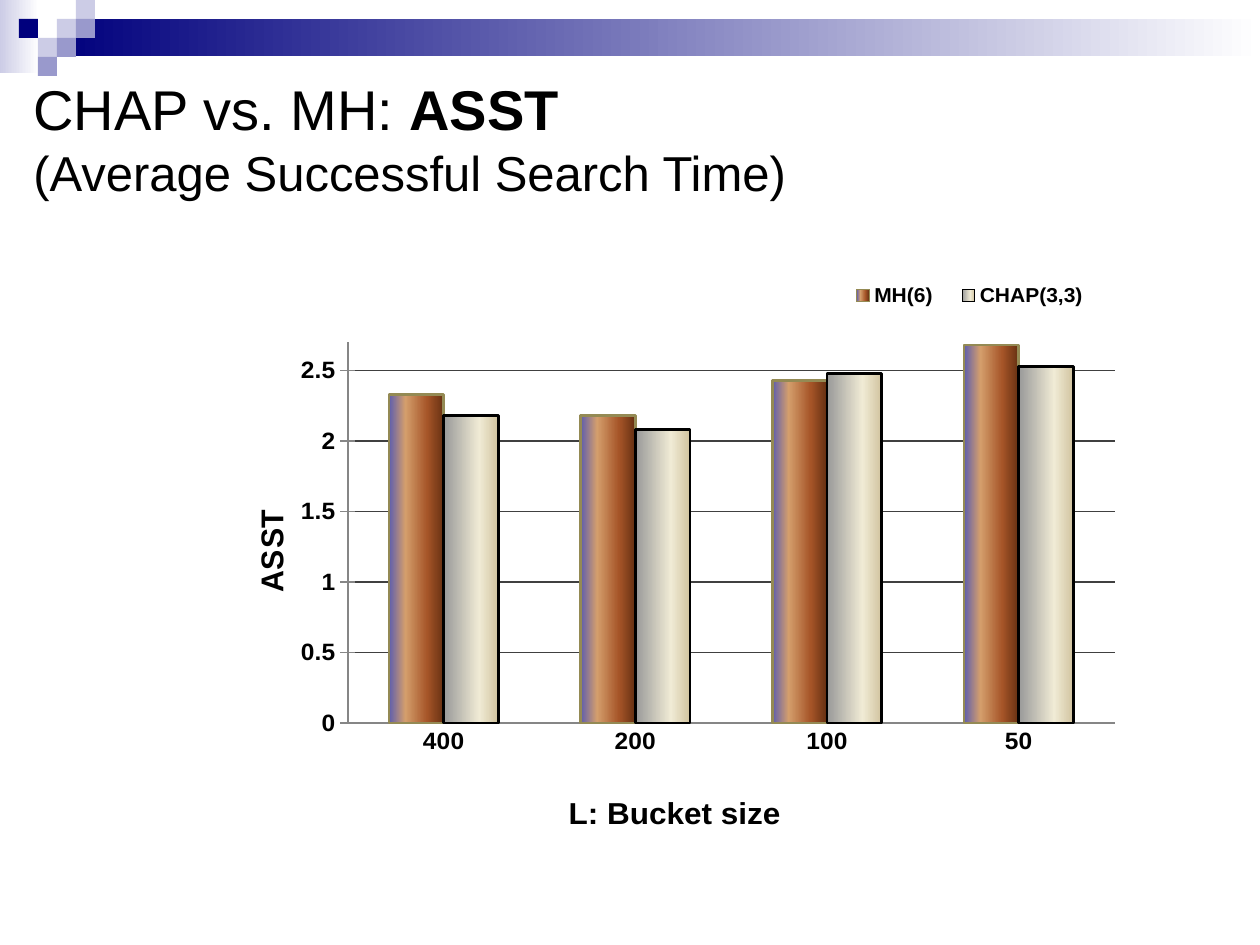
from pptx import Presentation, util as u, oxml
from pptx.chart.data import CategoryChartData
from pptx.dml.color import RGBColor
from pptx.enum import chart as ch, shapes, text
from pptx.oxml.ns import nsdecls, qn

BLACK = RGBColor(0x00, 0x00, 0x00)
WHITE = RGBColor(0xFF, 0xFF, 0xFF)
NAVY = RGBColor(0x00, 0x00, 0x7D)
PALE = RGBColor(0xCC, 0xCC, 0xE6)
LILAC = RGBColor(0x99, 0x99, 0xCC)
DARK = RGBColor(0x40, 0x40, 0x40)
GREY = RGBColor(0x86, 0x86, 0x86)
OLIVE = RGBColor(0x94, 0x8A, 0x54)
COPPER = [(0, RGBColor(0x5D, 0x5D, 0xAE)), (30, RGBColor(0xD4, 0x9E, 0x6C)),
          (70, RGBColor(0xA6, 0x55, 0x28)), (100, RGBColor(0x66, 0x30, 0x12))]
CREAM = [(0, RGBColor(0x99, 0x99, 0x99)), (65, RGBColor(0xF0, 0xEB, 0xD5)),
         (100, RGBColor(0xD1, 0xC3, 0x9F))]
SCALE = u.Inches(1) / 126


def px(*vals):
    return [round(v * SCALE) for v in vals]


class Deck:
    """Holds the style and the current slide."""

    def __init__(self, font):
        self.font = font
        self.prs = Presentation()
        self.prs.slide_width, self.prs.slide_height = px(1260, 945)
        self.slide = self.prs.slides.add_slide(self.prs.slide_layouts[6])

    def style(self, font, size, bold=False):
        font.name, font.size, font.bold = self.font, u.Pt(size), bold
        font.color.rgb = BLACK

    def line(self, line, color, width):
        line.color.rgb, line.width = color, u.Pt(width)

    def fade(self, fill, node, stops):
        fill.gradient()
        fill.gradient_angle = 0
        items = node.find(".//" + qn("a:gsLst"))
        for old in list(items):
            items.remove(old)
        for pos, color in stops:
            items.append(oxml.parse_xml(
                f'<a:gs {nsdecls("a")} pos="{pos * 1000}">'
                f'<a:srgbClr val="{color}"/></a:gs>'))

    def rect(self, x, y, w, h, color, end=None):
        box = self.slide.shapes.add_shape(
            shapes.MSO_SHAPE.RECTANGLE, *px(x, y, w, h))
        box.shadow.inherit = False
        box.line.fill.background()
        if end is None:
            box.fill.solid()
            box.fill.fore_color.rgb = color
        else:
            self.fade(box.fill, box._element, [(0, color), (100, end)])

    def title(self, x, y, w, h, rows):
        frame = self.slide.shapes.add_textbox(*px(x, y, w, h)).text_frame
        frame.word_wrap = True
        frame.vertical_anchor = text.MSO_ANCHOR.TOP
        frame.margin_top = px(12)[0]
        frame.text = "\n".join("".join(t for t, _ in runs) for _, runs in rows)
        for para, (size, runs) in zip(frame.paragraphs, rows):
            para.text = ""
            for words, bold in runs:
                run = para.add_run()
                run.text = words
                self.style(run.font, size, bold)

    def place(self, node, x, y, w=None, h=None, inner=False):
        for old in node.findall(qn("c:layout")):
            node.remove(old)
        parts = [("layoutTarget", "inner")] if inner else []
        parts += [("xMode", "edge"), ("yMode", "edge"), ("x", x), ("y", y)]
        if w:
            parts += [("w", w), ("h", h)]
        body = "".join(f'<c:{k} val="{v}"/>' for k, v in parts)
        item = oxml.parse_xml(f'<c:layout {nsdecls("c")}><c:manualLayout>'
                              f'{body}</c:manualLayout></c:layout>')
        after = node.find(qn("c:overlay"))
        if after is None:
            node.insert(0, item)
        else:
            after.addprevious(item)

    def border(self, chart, color, width):
        chart.font._element.addprevious(oxml.parse_xml(
            f'<c:spPr {nsdecls("c", "a")}><a:noFill/>'
            f'<a:ln w="{u.Pt(width)}"><a:solidFill><a:srgbClr val="{color}"/>'
            '</a:solidFill></a:ln></c:spPr>'))

    def axis(self, axis, name, spot, tick):
        axis.has_title = True
        frame = axis.axis_title.text_frame
        frame.text = name
        self.style(frame.paragraphs[0].runs[0].font, 18, True)
        self.place(axis.axis_title._element, *spot)
        self.style(axis.tick_labels.font, 14, True)
        axis.major_tick_mark = tick
        axis.minor_tick_mark = ch.XL_TICK_MARK.NONE
        self.line(axis.format.line, GREY, 0.75)

    def chart(self, x, y, w, h, cats, rows):
        data = CategoryChartData()
        data.categories = cats
        for name, vals, *_ in rows:
            data.add_series(name, vals)
        chart = self.slide.shapes.add_chart(
            ch.XL_CHART_TYPE.COLUMN_CLUSTERED, *px(x, y, w, h), data).chart
        chart.has_title = False
        self.style(chart.font, 12)
        self.border(chart, DARK, 2.25)
        plot = chart.plots[0]
        plot.gap_width, plot.overlap, plot.vary_by_categories = 150, 0, False
        for ser, (_, _, stops, edge) in zip(plot.series, rows):
            self.fade(ser.format.fill, ser._element, stops)
            self.line(ser.format.line, edge, 1.5)
        self.axis(chart.category_axis, "L: Bucket size", (0.4, 0.95),
                  ch.XL_TICK_MARK.NONE)
        val = chart.value_axis
        self.axis(val, "ASST", (0.06, 0.47), ch.XL_TICK_MARK.CROSS)
        val.minimum_scale, val.maximum_scale, val.major_unit = 0, 2.7, 0.5
        val.tick_labels.number_format = "General"
        val.tick_labels.number_format_is_linked = False
        self.line(val.major_gridlines.format.line, DARK, 0.75)
        chart.has_legend = True
        chart.legend.position = ch.XL_LEGEND_POSITION.RIGHT
        chart.legend.include_in_layout = False
        self.style(chart.legend.font, 12, True)
        self.place(chart.legend._element, 0.69, 0.08, 0.29, 0.06)
        area = chart._chartSpace.find(".//" + qn("c:plotArea"))
        self.place(area, 0.17, 0.19, 0.82, 0.65, inner=True)


def main():
    deck = Deck("Arial")
    deck.rect(0, 0, 39, 73, PALE, WHITE)
    deck.rect(57, 19, 1203, 37, NAVY, WHITE)
    side = 19
    tiles = [(3, 1, PALE), (4, 0, PALE), (4, 1, LILAC), (2, 2, PALE),
             (1, 1, NAVY), (3, 2, LILAC), (2, 3, LILAC)]
    for col, row, color in tiles:
        deck.rect(col * side, row * side, side, side, color)
    deck.chart(189, 231, 935, 609, ["400", "200", "100", "50"], [
        ("MH(6)", (2.33, 2.18, 2.43, 2.68), COPPER, OLIVE),
        ("CHAP(3,3)", (2.18, 2.08, 2.48, 2.53), CREAM, BLACK)])
    deck.title(21, 63, 1230, 179, [
        (32, [("CHAP vs. MH: ", False), ("ASST", True)]),
        (28, [("(Average Successful Search Time)", False)])])
    deck.prs.save("out.pptx")


if __name__ == "__main__":
    main()
